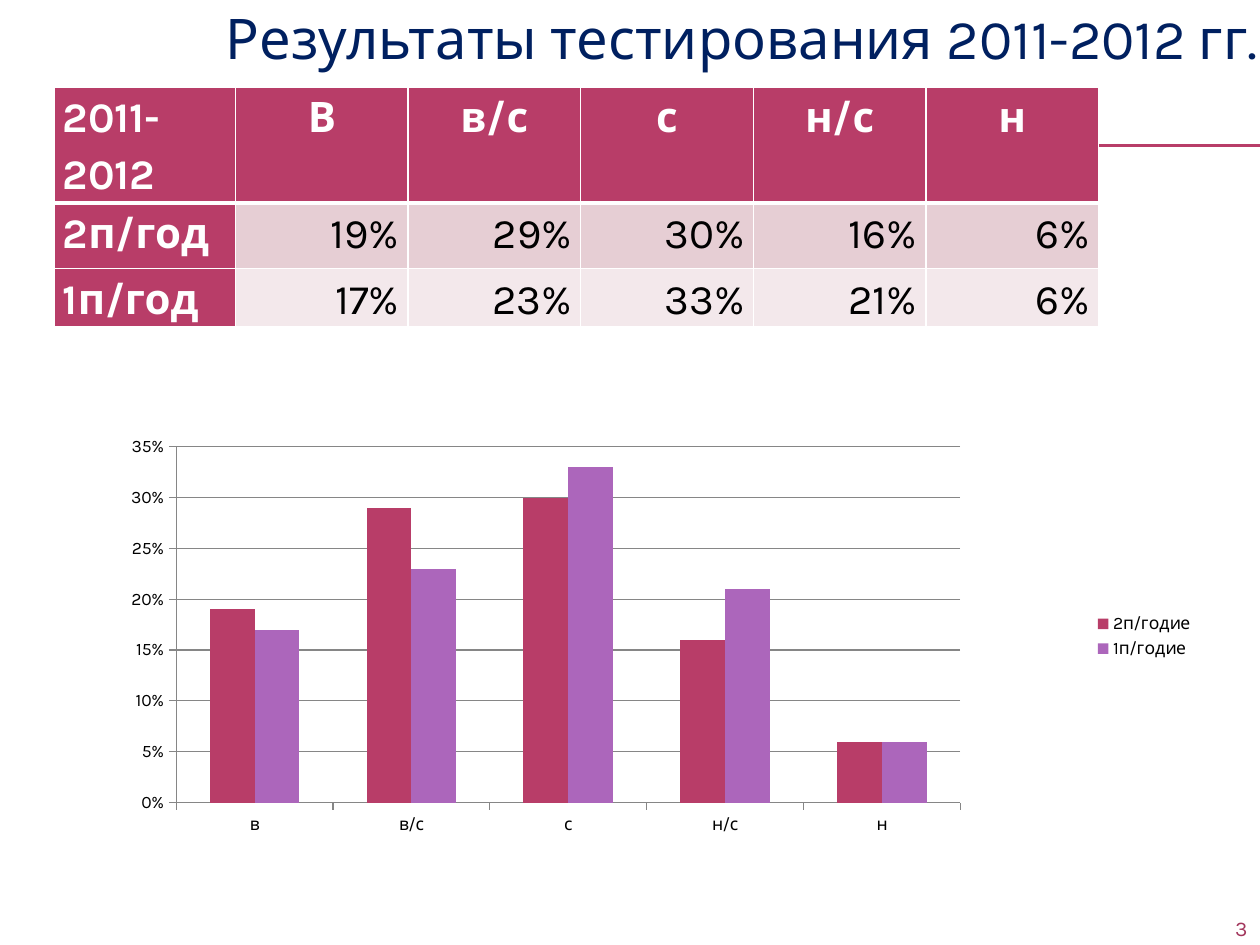
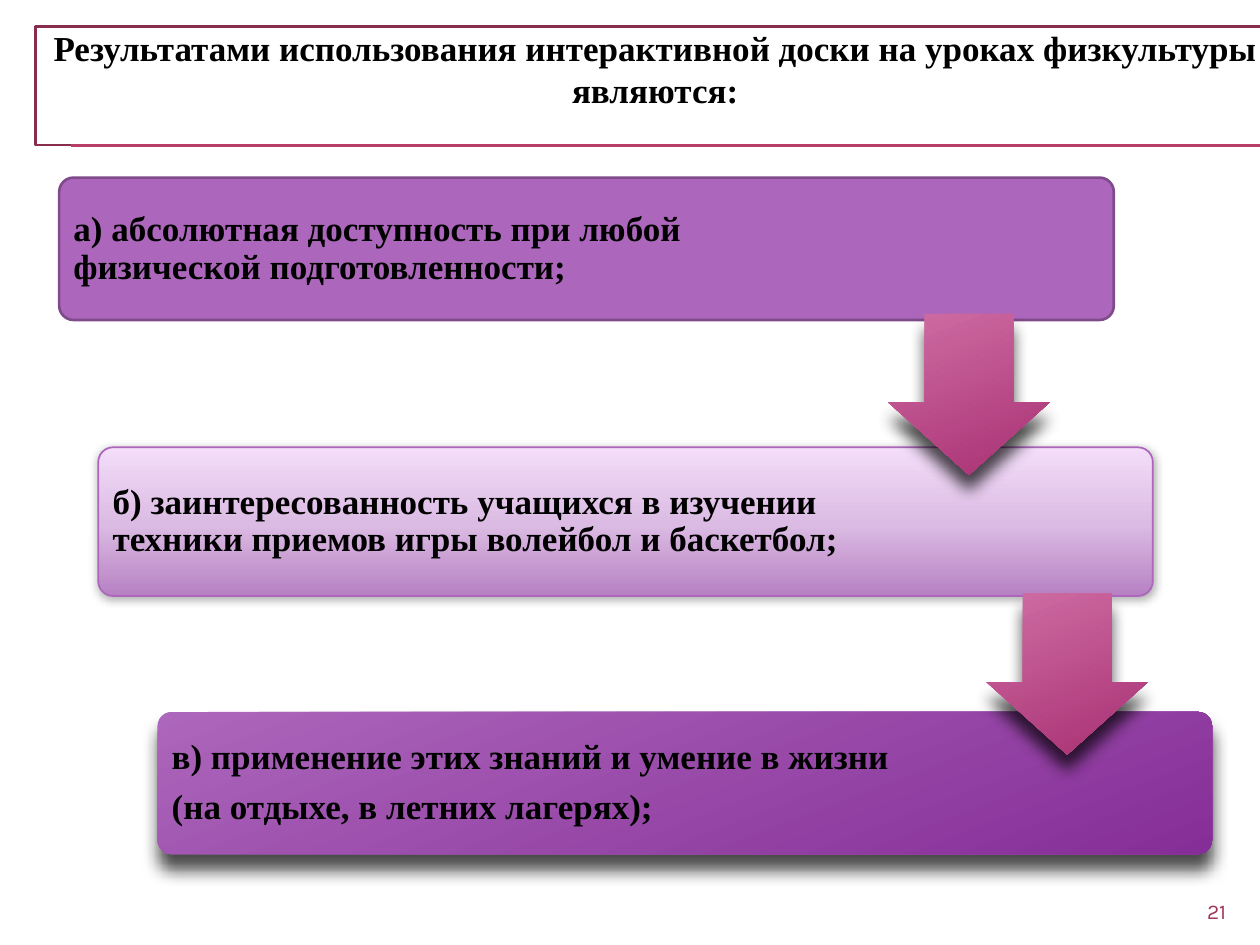
"""Build two slides: yearly test results and the benefits of an interactive board."""
from dataclasses import dataclass

from lxml import etree
from pptx import Presentation
from pptx import util as u
from pptx.chart.data import CategoryChartData
from pptx.dml.color import RGBColor
from pptx.enum import chart as charts, shapes, text
from pptx.oxml.ns import qn


@dataclass(frozen=True)
class Theme:
    """Colours, fonts and type sizes of the deck."""
    white: str = "FFFFFF"
    black: str = "000000"
    navy: str = "002060"
    rose: str = "B83D68"
    rose_dark: str = "882D4D"
    rose_number: str = "A2365C"
    bands: tuple = ("E6CED4", "F3E8EB")
    violet: str = "AC66BB"
    violet_dark: str = "7F4B8A"
    grid: str = "868686"
    pale_gradient: tuple = ((0, "B781C3"), (48, "DBBBE3"), (100, "F3DDFA"))
    violet_gradient: tuple = ((0, "AC66BB"), (100, "852E97"))
    arrow_gradient: tuple = ((0, "CF6DA4"), (100, "A83073"))
    soft_shadow: tuple = (32, 5, 1)
    deep_shadow: tuple = (70, 9, 9)
    sans: str = "Karla"
    serif: str = "Times New Roman"
    title: int = 32
    table: int = 24
    body: int = 20
    number: int = 12
    chart: int = 10


THEME = Theme()
COLUMNS, ROWS = 100, 75
LEFT, CENTER, RIGHT = (text.PP_ALIGN.LEFT, text.PP_ALIGN.CENTER, text.PP_ALIGN.RIGHT)


def rgb(color):
    """Turn a hex string into a colour."""
    return RGBColor.from_string(color)


class Deck:
    """Holds the presentation, the current slide and the drawing methods."""

    def __init__(self):
        """Open a presentation measured in grid columns and rows."""
        self.presentation = Presentation()
        self.presentation.slide_width = u.Inches(10)
        self.presentation.slide_height = u.Inches(7.5)
        self.slide = None

    def x(self, columns):
        """Return the length of a number of grid columns."""
        return u.Emu(round(self.presentation.slide_width * columns / COLUMNS))

    def y(self, rows):
        """Return the length of a number of grid rows."""
        return u.Emu(round(self.presentation.slide_height * rows / ROWS))

    def area(self, left, top, width, height):
        """Convert a grid area into lengths."""
        return self.x(left), self.y(top), self.x(width), self.y(height)

    def new_slide(self):
        """Start a title-only slide with the shared double rule."""
        self.slide = self.presentation.slides.add_slide(self.presentation.slide_layouts[5])
        for row in (11.5, 11.6):
            self.rule(5.6, row, COLUMNS)

    def rule(self, left, row, right):
        """Draw a thin horizontal line."""
        line = self.slide.shapes.add_connector(
            shapes.MSO_CONNECTOR.STRAIGHT, self.x(left), self.y(row), self.x(right), self.y(row))
        line.line.color.rgb = rgb(THEME.rose)
        line.line.width = u.Pt(0.75)
        etree.SubElement(line.element.find(qn("p:spPr")), qn("a:effectLst"))

    def text_run(self, paragraph, words, size, color, font=THEME.sans, bold=False, align=LEFT):
        """Add one formatted run to a paragraph."""
        paragraph.alignment = align
        run = paragraph.add_run()
        run.text = words
        run.font.size = u.Pt(size)
        run.font.name = font
        run.font.bold = bold
        run.font.color.rgb = rgb(color)

    def title(self, words, area, size, color, **style):
        """Place and format the title placeholder and return it."""
        shape = self.slide.shapes.title
        shape.left, shape.top, shape.width, shape.height = self.area(*area)
        frame = shape.text_frame
        frame.word_wrap = True
        frame.auto_size = text.MSO_AUTO_SIZE.NONE
        frame.vertical_anchor = text.MSO_ANCHOR.TOP
        self.text_run(frame.paragraphs[0], words, size, color, **style)
        return shape

    def number(self, value, left, top):
        """Add the slide number."""
        shape = self.slide.shapes.add_textbox(*self.area(left, top, 8.3, 2.7))
        shape.text_frame.word_wrap = True
        self.text_run(shape.text_frame.paragraphs[0], value, THEME.number,
                      THEME.rose_number, align=RIGHT)

    def borders(self, cell, bottom):
        """Draw white borders around a table cell."""
        properties = cell._tc.get_or_add_tcPr()
        for side, points in (("L", 1), ("R", 1), ("T", 1), ("B", bottom)):
            line = etree.SubElement(properties, qn(f"a:ln{side}"), w=str(u.Pt(points)))
            fill = etree.SubElement(line, qn("a:solidFill"))
            etree.SubElement(fill, qn("a:srgbClr"), val=THEME.white)

    def table(self, rows, area, widths, heights):
        """Add a table with a header row, a header column and banded rows."""
        frame = self.slide.shapes.add_table(len(rows), len(widths), *self.area(*area))
        table = frame.table
        table.first_row = table.horz_banding = False
        for column, width in zip(table.columns, widths):
            column.width = self.x(width)
        for row, height in zip(table.rows, heights):
            row.height = self.y(height)
        frame.height = self.y(area[3])
        for i, values in enumerate(rows):
            for j, value in enumerate(values):
                header = i == 0 or j == 0
                cell = table.cell(i, j)
                cell.margin_left = cell.margin_right = self.x(0.7)
                cell.margin_top = cell.margin_bottom = 0
                self.borders(cell, 1 if i else 3)
                cell.fill.solid()
                cell.fill.fore_color.rgb = rgb(THEME.rose if header else THEME.bands[i - 1])
                paragraph = cell.text_frame.paragraphs[0]
                paragraph.line_spacing = 1.15
                self.text_run(paragraph, value, THEME.table,
                              THEME.white if header else THEME.black, bold=header,
                              align=LEFT if j == 0 else RIGHT if i else CENTER)

    def column_chart(self, categories, series, area, plot_area):
        """Add a clustered column chart of percentages."""
        data = CategoryChartData(number_format="0%")
        data.categories = categories
        for name, values in series:
            data.add_series(name, values)
        chart = self.slide.shapes.add_chart(
            charts.XL_CHART_TYPE.COLUMN_CLUSTERED, *self.area(*area), data).chart
        chart.has_title = False
        chart.font.size = u.Pt(THEME.chart)
        chart.font.name = THEME.sans
        chart.font.color.rgb = rgb(THEME.black)
        chart.has_legend = True
        chart.legend.position = charts.XL_LEGEND_POSITION.RIGHT
        chart.legend.include_in_layout = False
        plot = chart.plots[0]
        plot.gap_width, plot.overlap, plot.vary_by_categories = 150, 0, False
        for item, color in zip(plot.series, (THEME.rose, THEME.violet)):
            item.format.fill.solid()
            item.format.fill.fore_color.rgb = rgb(color)
        axis = chart.value_axis
        axis.minimum_scale, axis.maximum_scale, axis.major_unit = 0, 0.35, 0.05
        axis.tick_labels.number_format = "0%"
        axis.tick_labels.number_format_is_linked = False
        axis.has_major_gridlines = True
        for item in (axis, chart.category_axis):
            item.major_tick_mark = charts.XL_TICK_MARK.OUTSIDE
        for item in (axis, chart.category_axis, axis.major_gridlines):
            item.format.line.color.rgb = rgb(THEME.grid)
            item.format.line.width = u.Pt(0.75)
        self.plot_layout(chart, plot_area)

    def plot_layout(self, chart, plot_area):
        """Fix the inner plot area as shares of the chart."""
        plot = chart.element.find(".//" + qn("c:plotArea"))
        for old in plot.findall(qn("c:layout")):
            plot.remove(old)
        layout = etree.Element(qn("c:layout"))
        plot.insert(0, layout)
        manual = etree.SubElement(layout, qn("c:manualLayout"))
        settings = [("layoutTarget", "inner"), ("xMode", "edge"), ("yMode", "edge")]
        for name, value in settings + list(zip("xywh", plot_area)):
            etree.SubElement(manual, qn(f"c:{name}"), val=str(value))

    def shape(self, kind, area, adjustments, fill, angle=0, line=None, shadow=None):
        """Add a preset shape with a solid or gradient fill."""
        shape = self.slide.shapes.add_shape(kind, *self.area(*area))
        for i, value in enumerate(adjustments):
            shape.adjustments[i] = value
        if isinstance(fill, str):
            shape.fill.solid()
            shape.fill.fore_color.rgb = rgb(fill)
        else:
            self.gradient(shape, fill, angle)
        if line:
            self.outline(shape, *line)
        else:
            shape.line.fill.background()
        shape.shadow.inherit = False
        if shadow:
            self.shadow(shape, *shadow)
        return shape

    def outline(self, shape, color, points):
        """Give a shape a solid outline."""
        shape.line.color.rgb = rgb(color)
        shape.line.width = u.Pt(points)

    def gradient(self, shape, stops, angle):
        """Fill a shape with a linear gradient, the angle being clockwise."""
        shape.fill.gradient()
        shape.fill.gradient_angle = 360 - angle
        stop_list = shape.element.find(".//" + qn("a:gsLst"))
        for stop in list(stop_list):
            stop_list.remove(stop)
        for position, color in stops:
            stop = etree.SubElement(stop_list, qn("a:gs"), pos=str(position * 1000))
            etree.SubElement(stop, qn("a:srgbClr"), val=color)

    def shadow(self, shape, opacity, blur, distance):
        """Drop a black shadow below a shape."""
        effects = shape.element.find(".//" + qn("a:effectLst"))
        shadow = etree.SubElement(effects, qn("a:outerShdw"), blurRad=str(u.Pt(blur)),
                                  dist=str(u.Pt(distance)), dir="5400000", rotWithShape="0")
        color = etree.SubElement(shadow, qn("a:srgbClr"), val=THEME.black)
        etree.SubElement(color, qn("a:alpha"), val=str(opacity * 1000))

    def step(self, lines, left, top, height, **look):
        """Add a rounded box with text in its left part."""
        shape = self.shape(shapes.MSO_SHAPE.ROUNDED_RECTANGLE,
                           (left, top, 83.7, height), [0.1], **look)
        frame = shape.text_frame
        frame.word_wrap = True
        frame.vertical_anchor = text.MSO_ANCHOR.MIDDLE
        frame.margin_left, frame.margin_right = self.x(0.8), self.x(21)
        frame.margin_top = frame.margin_bottom = self.y(0.8)
        for i, words in enumerate(lines):
            paragraph = frame.add_paragraph() if i else frame.paragraphs[0]
            paragraph.line_spacing = 0.9
            paragraph.space_after = u.Pt(0.35 * THEME.body)
            self.text_run(paragraph, words, THEME.body, THEME.black, font=THEME.serif, bold=True)

    def arrow(self, left, top):
        """Add a block arrow that leads down to the next step."""
        self.shape(shapes.MSO_SHAPE.DOWN_ARROW, (left, top, 12.8, 12.8), [0.55, 0.45],
                   THEME.arrow_gradient, 69, shadow=THEME.deep_shadow)


def results_slide(deck):
    """Show the test results as a table and a chart."""
    levels = ["в", "в/с", "с", "н/с", "н"]
    halves = [("2п/год", (0.19, 0.29, 0.30, 0.16, 0.06)),
              ("1п/год", (0.17, 0.23, 0.33, 0.21, 0.06))]
    deck.new_slide()
    deck.title("Результаты тестирования 2011-2012 гг.", (16.9, -0.2, 89.8, 6.4),
               THEME.title, THEME.navy)
    deck.number("3", 91.7, 72.2)
    deck.column_chart(levels, [(name + "ие", values) for name, values in halves],
                      (5.9, 32.8, 89.8, 35.4), (0.09, 0.075, 0.693, 0.798))
    rows = [["2011-2012", "В", *levels[1:]]]
    rows += [[name, *(f"{value:.0%}" for value in values)] for name, values in halves]
    deck.table(rows, (4.3, 6.9, 82.7, 19), [14.4] + [13.7] * 5, [7.3, 5.2, 3.7])


def benefits_slide(deck):
    """Show three benefits as steps linked by arrows."""
    deck.new_slide()
    title = deck.title(
        "Результатами использования интерактивной доски на уроках физкультуры являются:",
        (2.8, 2.1, 98.4, 9.4), THEME.body, THEME.black,
        font=THEME.serif, bold=True, align=CENTER)
    title.text_frame.margin_top = 0
    deck.outline(title, THEME.rose_dark, 1.5)
    deck.step(["а) абсолютная доступность при любой физической подготовленности;"],
              4.7, 14.1, 11.3, fill=THEME.violet, line=(THEME.violet_dark, 1.5))
    deck.step(["б) заинтересованность учащихся в изучении техники приемов игры "
               "волейбол и баскетбол;"], 7.8, 35.5, 11.8, fill=THEME.pale_gradient,
              angle=270, line=(THEME.violet, 1), shadow=THEME.soft_shadow)
    deck.step(["в) применение этих знаний и умение в жизни", "(на отдыхе, в летних лагерях);"],
              12.5, 56.5, 11.3, fill=THEME.violet_gradient, angle=69,
              shadow=THEME.deep_shadow)
    for left, top in ((70.5, 24.9), (78.3, 47.1)):
        deck.arrow(left, top)
    deck.number("21", 90, 70.8)


def main():
    """Build and save the deck."""
    deck = Deck()
    results_slide(deck)
    benefits_slide(deck)
    deck.presentation.save("out.pptx")


if __name__ == "__main__":
    main()
